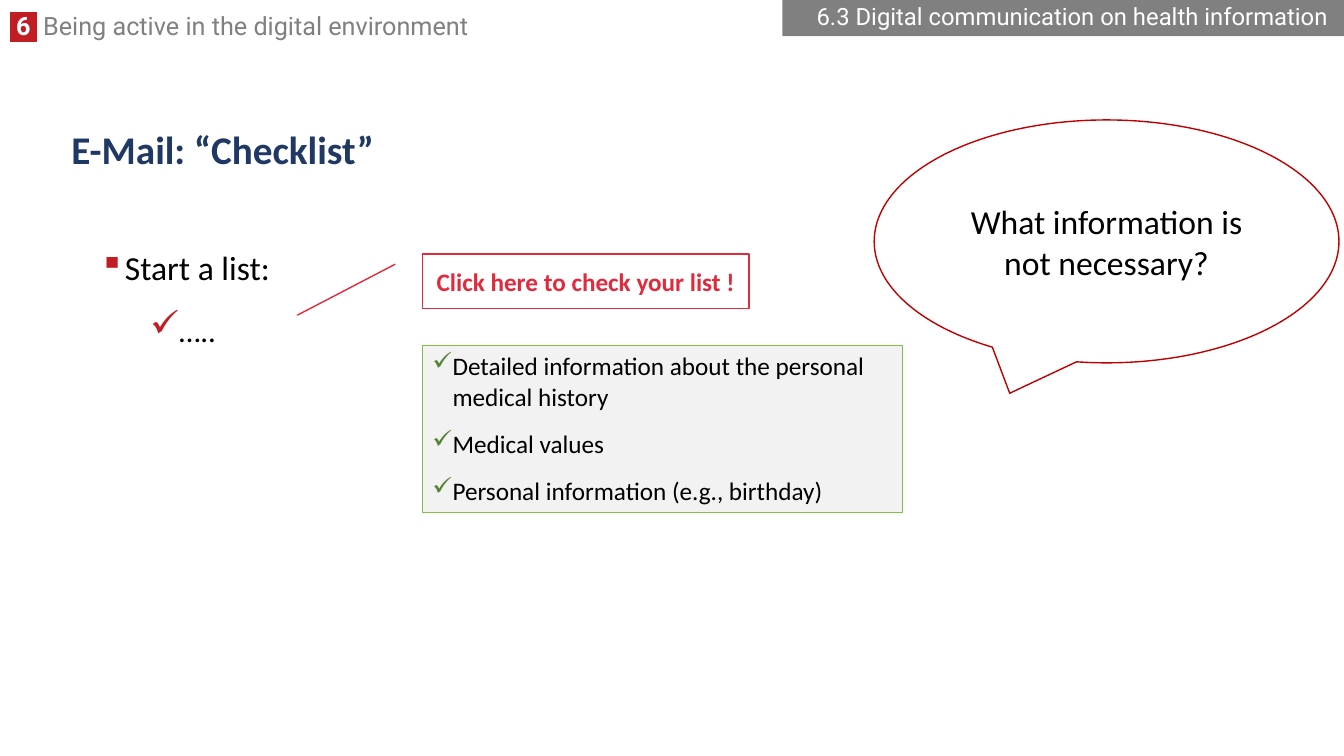
from dataclasses import dataclass

from lxml import etree
from pptx import Presentation
from pptx.dml.color import RGBColor
from pptx.enum.shapes import MSO_SHAPE
from pptx.enum.text import MSO_ANCHOR, PP_ALIGN
from pptx.oxml.ns import qn
from pptx.util import Emu, Pt

RECTANGLE = MSO_SHAPE.RECTANGLE
SPEECH_BUBBLE = MSO_SHAPE.OVAL_CALLOUT
LINE_CALLOUT = MSO_SHAPE.LINE_CALLOUT_1
TOP, MIDDLE = MSO_ANCHOR.TOP, MSO_ANCHOR.MIDDLE
LEFT, CENTER, RIGHT = PP_ALIGN.LEFT, PP_ALIGN.CENTER, PP_ALIGN.RIGHT
EMU_PER_PX = 9144


@dataclass(frozen=True)
class Theme:
    body_font: str = "Calibri"
    header_font: str = "Roboto"
    white: str = "FFFFFF"
    black: str = "000000"
    grey: str = "808080"
    pale: str = "F2F2F2"
    navy: str = "203864"
    brand_red: str = "C01E24"
    bubble_red: str = "C00000"
    callout_red: str = "E12A3C"
    green_line: str = "80C141"
    green_tick: str = "548235"
    title_size: int = 28
    text_size: int = 24
    sub_size: int = 22
    small_size: int = 18
    section_size: int = 17


THEME = Theme()


def px(length):
    return Emu(length * EMU_PER_PX)


def rgb(color):
    return RGBColor.from_string(color)


def prepare_text(box, anchor):
    frame = box.text_frame
    frame.word_wrap = True
    frame.vertical_anchor = anchor
    return frame


def add_text_box(page, area, anchor=TOP):
    return prepare_text(page.shapes.add_textbox(*map(px, area)), anchor)


def add_panel(page, kind, area, fill, line=None, width=1, anchor=MIDDLE):
    panel = page.shapes.add_shape(kind, *map(px, area))
    panel.shadow.inherit = False
    panel.fill.solid()
    panel.fill.fore_color.rgb = rgb(fill)
    if line:
        panel.line.color.rgb = rgb(line)
        panel.line.width = Pt(width)
    else:
        panel.line.fill.background()
    return prepare_text(panel, anchor)


def add_para(frame, first=True, align=LEFT, spacing=1.0):
    para = frame.paragraphs[0] if first else frame.add_paragraph()
    para.alignment = align
    para.line_spacing = spacing
    return para


def add_span(para, text, size, color=THEME.black, font=THEME.body_font,
             bold=False, highlight=None):
    span = para.add_run()
    span.text = text
    span.font.size = Pt(size)
    span.font.name = font
    span.font.bold = bold
    span.font.color.rgb = rgb(color)
    if highlight:
        mark = etree.Element(qn("a:highlight"))
        etree.SubElement(mark, qn("a:srgbClr"), val=highlight)
        span.font.fill
        span.font._element.find(qn("a:solidFill")).addnext(mark)


def add_bullet(para, symbol, color, margin, hanging, percent=100):
    properties = para._p.get_or_add_pPr()
    properties.set("marL", str(px(margin)))
    properties.set("indent", str(-px(hanging)))
    bullet_color = etree.SubElement(properties, qn("a:buClr"))
    etree.SubElement(bullet_color, qn("a:srgbClr"), val=color)
    etree.SubElement(properties, qn("a:buSzPct"), val=str(percent * 1000))
    etree.SubElement(properties, qn("a:buChar"), char=symbol)


def add_list(frame, items, spacing=1.0):
    for index, (text, size, level, bullet) in enumerate(items):
        para = add_para(frame, index == 0, spacing=spacing)
        para.level = level
        para.space_before = Pt(6 if index else 0)
        para.space_after = Pt(6)
        add_bullet(para, *bullet)
        add_span(para, text, size)


def add_header(page):
    chapter = add_para(add_text_box(page, (0, 11, 952, 35)), spacing=0.8)
    add_span(chapter, " 6 ", THEME.small_size, THEME.white, THEME.header_font,
             bold=True, highlight=THEME.brand_red)
    add_span(chapter, " Being active in the digital environment",
             THEME.small_size, THEME.grey, THEME.header_font)
    banner = add_panel(page, RECTANGLE, (776, 0, 557, 36), THEME.grey)
    section = add_para(banner, align=RIGHT, spacing=0.9)
    add_span(section, "6.3 Digital communication on health information ",
             THEME.section_size, THEME.white, THEME.header_font)


def add_title(page, text):
    title = add_text_box(page, (61, 118, 1210, 66), MIDDLE)
    add_span(add_para(title, spacing=0.9), text, THEME.title_size, THEME.navy, bold=True)


def add_callout(page, kind, area, line, text, size, color, bold=False):
    callout = add_panel(page, kind, area, THEME.white, line)
    add_span(add_para(callout, align=CENTER), text, size, color, bold=bold)


def add_checklist(page, answers):
    panel = add_panel(page, RECTANGLE, (419, 343, 476, 165), THEME.pale,
                      THEME.green_line, 0.75, TOP)
    tick = ("✓", THEME.green_tick, 20, 20)
    add_list(panel, [(answer, THEME.small_size, 1, tick) for answer in answers])


def main():
    deck = Presentation()
    deck.slide_width, deck.slide_height = px(1333), px(750)
    page = deck.slides.add_slide(deck.slide_layouts[6])

    add_header(page)
    add_title(page, "E-Mail: “Checklist”")
    add_callout(page, SPEECH_BUBBLE, (867, 119, 461, 241), THEME.bubble_red,
                "What information is not necessary?", THEME.text_size, THEME.black)
    add_list(add_text_box(page, (89, 232, 795, 470)), [
        ("Start a list:", THEME.text_size, 0, ("▪", THEME.brand_red, 25, 25)),
        ("…..", THEME.sub_size, 1, ("✓", THEME.brand_red, 75, 25, 120)),
    ], spacing=1.2)
    add_checklist(page, [
        "Detailed information about the personal medical history",
        "Medical values",
        "Personal information (e.g., birthday)",
    ])
    add_callout(page, LINE_CALLOUT, (419, 252, 324, 54), THEME.callout_red,
                "Click here to check your list !", THEME.small_size,
                THEME.callout_red, bold=True)
    deck.save("out.pptx")


if __name__ == "__main__":
    main()
